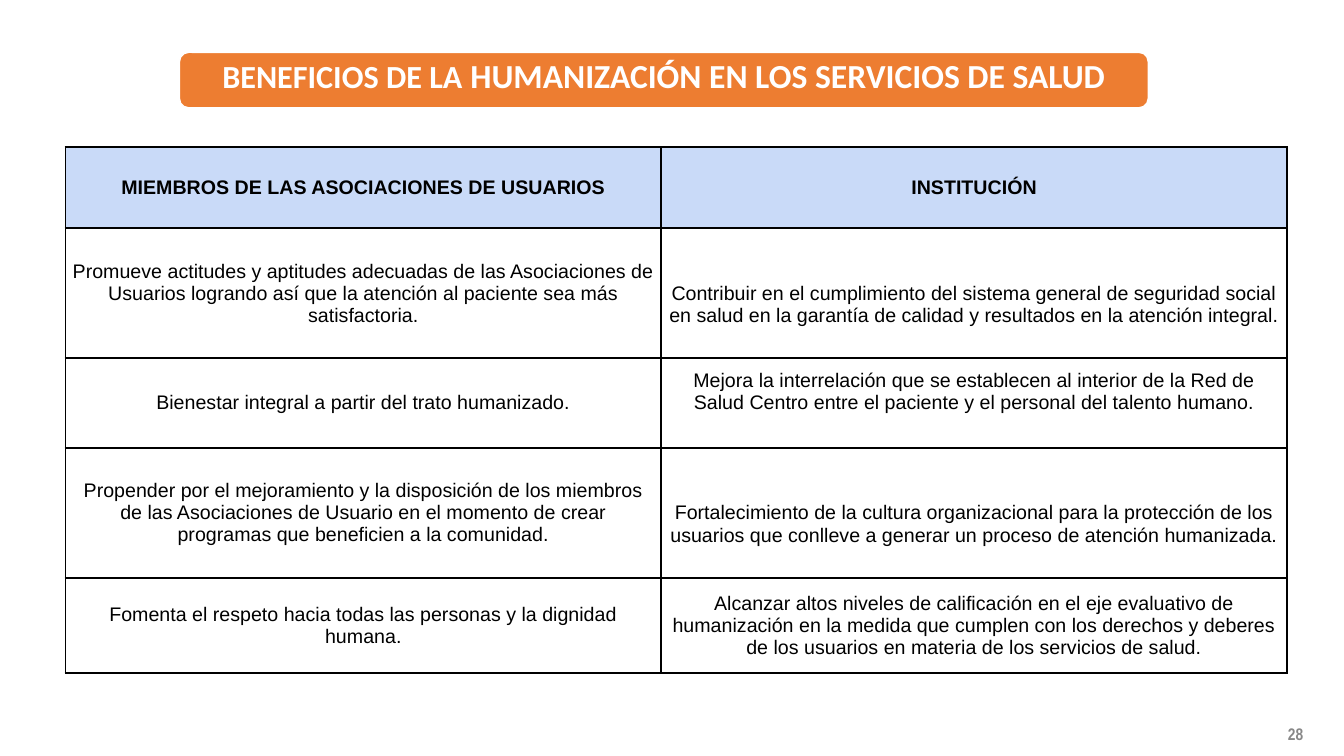
import pptx
import pptx.util
import pptx.dml.color
import pptx.enum.shapes
import pptx.enum.text
import pptx.oxml

Pt = pptx.util.Pt
MIDDLE = pptx.enum.text.MSO_ANCHOR.MIDDLE
NS = "http://schemas.openxmlformats.org/drawingml/2006/main"


def color(hex_value):
    return pptx.dml.color.RGBColor.from_string(hex_value)


def add_run(paragraph, text, font, size, hex_value, bold):
    paragraph.alignment = pptx.enum.text.PP_ALIGN.CENTER
    run = paragraph.add_run()
    run.text = text
    run.font.name = font
    run.font.size = Pt(size)
    run.font.bold = bold
    run.font.color.rgb = color(hex_value)


presentation = pptx.Presentation()
presentation.slide_width = Pt(960)
presentation.slide_height = Pt(540)
slide = presentation.slides.add_slide(presentation.slide_layouts[6])

# Slide number
number = slide.shapes.add_textbox(Pt(897.8), Pt(509.8), Pt(55.4), Pt(28.8)).text_frame
number.word_wrap = True
number.vertical_anchor = MIDDLE
add_run(number.paragraphs[0], "28", "Arial Narrow", 12, "888888", True)

# Title banner
banner = slide.shapes.add_shape(
    pptx.enum.shapes.MSO_SHAPE.ROUNDED_RECTANGLE, Pt(128.2), Pt(37.4), Pt(692), Pt(39.6))
banner.shadow.inherit = False
banner.fill.solid()
banner.fill.fore_color.rgb = color("ED7D31")
banner.line.color.rgb = color("FFFFFF")
banner.line.width = Pt(1)

title = slide.shapes.add_textbox(Pt(130.3), Pt(37.4), Pt(687.6), Pt(36)).text_frame
title.word_wrap = True
title.vertical_anchor = MIDDLE
title.margin_top = title.margin_bottom = Pt(7.2)
title.paragraphs[0].line_spacing = 0.9
for text, size in [("BENEFICIOS DE LA ", 23),
                   ("HUMANIZACIÓN EN LOS SERVICIOS DE SALUD", 24)]:
    add_run(title.paragraphs[0], text, "Calibri", size, "FFFFFF", True)

# Benefits table: row height, members' benefit, institution's benefit
benefits = [
    (58, "MIEMBROS DE LAS ASOCIACIONES DE USUARIOS", "INSTITUCIÓN"),
    (93, "Promueve actitudes y aptitudes adecuadas de las Asociaciones de Usuarios "
         "logrando así que la atención al paciente sea más satisfactoria.",
     "Contribuir en el cumplimiento del sistema general de seguridad social en salud "
     "en la garantía de calidad y resultados en la atención integral."),
    (64, "Bienestar integral a partir del trato humanizado.",
     "Mejora la interrelación que se establecen al interior de la Red de Salud Centro "
     "entre el paciente y el personal del talento humano."),
    (93, "Propender por el mejoramiento y la disposición de los miembros de las "
         "Asociaciones de Usuario en el momento de crear programas que beneficien "
         "a la comunidad.",
     "Fortalecimiento de la cultura organizacional para la protección de los usuarios "
     "que conlleve a generar un proceso de atención humanizada."),
    (68, "Fomenta el respeto hacia todas las personas y la dignidad humana.",
     "Alcanzar altos niveles de calificación en el eje evaluativo de humanización en la "
     "medida que cumplen con los derechos y deberes de los usuarios en materia de los "
     "servicios de salud."),
]
# Extra top and bottom margin of the cells whose text sits off centre
offsets = {(1, 1): (16, 0), (2, 1): (0, 16), (3, 1): (16, 0)}

table = slide.shapes.add_table(
    len(benefits), 2, Pt(46.8), Pt(105), Pt(872.6), Pt(376)).table
table.columns[0].width = Pt(425.5)
table.columns[1].width = Pt(447.1)

for row, (height, *texts) in enumerate(benefits):
    table.rows[row].height = Pt(height)
    header = row == 0
    for column, text in enumerate(texts):
        cell = table.cell(row, column)
        extra_top, extra_bottom = offsets.get((row, column), (0, 0))
        cell.margin_left = cell.margin_right = Pt(5)
        cell.margin_top = Pt(5 + extra_top)
        cell.margin_bottom = Pt(5 + extra_bottom)
        cell.vertical_anchor = MIDDLE
        add_run(cell.text_frame.paragraphs[0], text, "Arial", 14, "000000", header)

        # Borders come before the fill
        properties = cell._tc.get_or_add_tcPr()
        for side in ("lnL", "lnR", "lnT", "lnB"):
            properties.append(pptx.oxml.parse_xml(
                f'<a:{side} xmlns:a="{NS}" w="{Pt(1.5)}"><a:solidFill>'
                f'<a:srgbClr val="000000"/></a:solidFill></a:{side}>'))
        if header:
            cell.fill.solid()
            cell.fill.fore_color.rgb = color("C9DAF8")
        else:
            cell.fill.background()

presentation.save("out.pptx")
